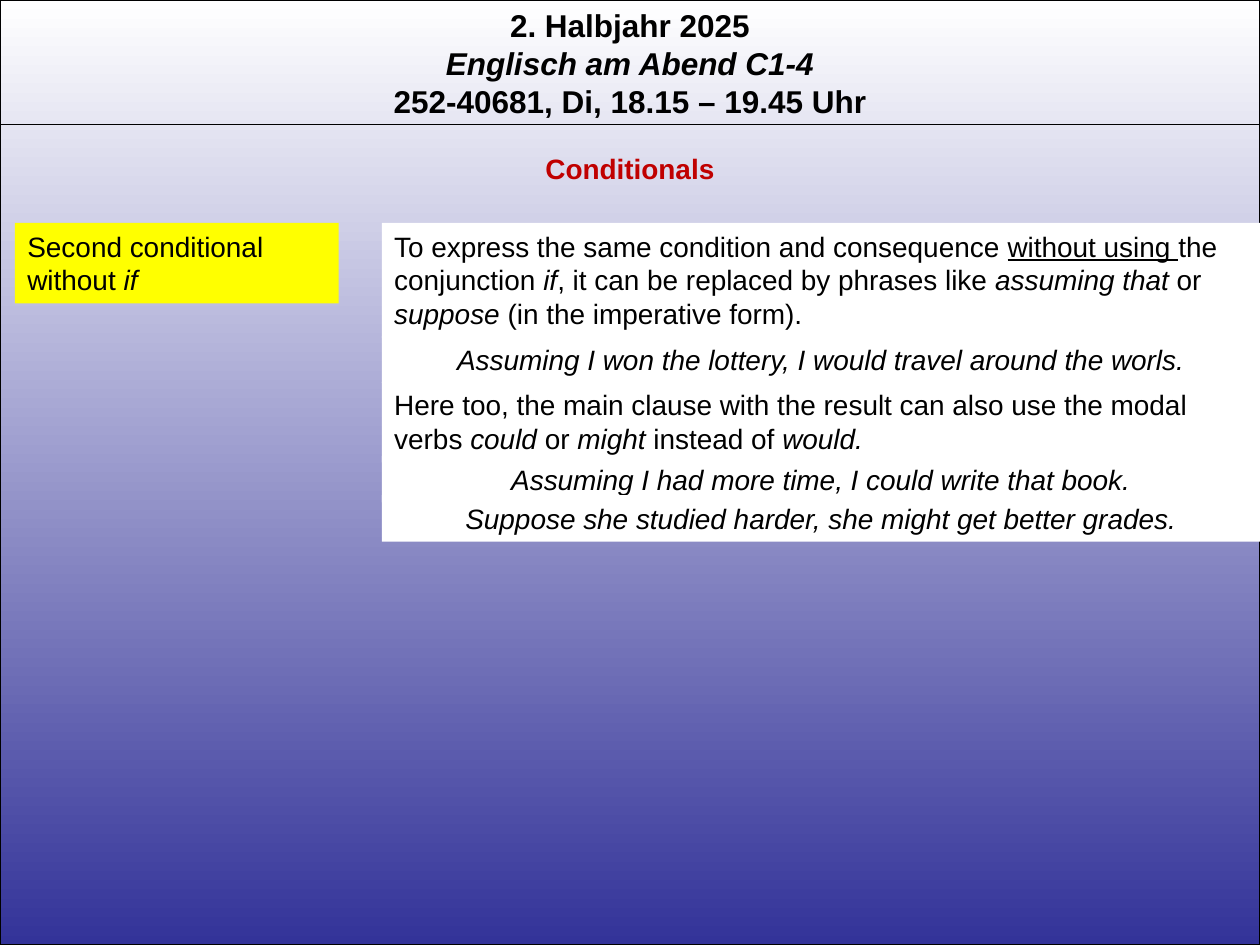
from pptx import Presentation
from pptx.dml.color import RGBColor
from pptx.enum.shapes import MSO_CONNECTOR, MSO_SHAPE
from pptx.enum.text import MSO_ANCHOR, MSO_AUTO_SIZE, PP_ALIGN
from pptx.oxml.ns import qn
from pptx.util import Pt
from lxml import etree

LEFT, CENTER = PP_ALIGN.LEFT, PP_ALIGN.CENTER
RECTANGLE, STRAIGHT = MSO_SHAPE.RECTANGLE, MSO_CONNECTOR.STRAIGHT
TOP, NO_RESIZE = MSO_ANCHOR.TOP, MSO_AUTO_SIZE.NONE

THEME = {
    "font": "Arial", "header_size": 18, "body_size": 16, "line": 0.75,
    "black": "000000", "white": "FFFFFF", "blue": "333399",
    "yellow": "FFFF00", "red": "C00000",
}
WIDTH, HEIGHT = 720, 540
HEADER_RULE = 71.3
TITLE_BOX = (0, 82.8, WIDTH, 26.6)
TOPIC_BOX = (8.6, 127.4, 185, 46.1)
PANEL_LEFT = 218.2

HEADER = [
    [("2. Halbjahr 2025", "b")],
    [("Englisch am Abend C1-4", "bi")],
    [("252-40681, Di, 18.15 – 19.45 Uhr", "b")],
]
TITLE = [[("Conditionals", "b")]]
TOPIC = [[("Second conditional", "")], [("without ", ""), ("if", "i")]]
PANELS = [
    (127.4, 65.5, LEFT, [
        ("To express the same condition and consequence ", ""),
        ("without using ", "u"), ("the conjunction ", ""), ("if", "i"),
        (", it can be replaced by phrases like ", ""),
        ("assuming that", "i"), (" or ", ""), ("suppose ", "i"),
        ("(in the imperative form).", "")]),
    (192.2, 26.6, CENTER, [
        ("Assuming I won the lottery, I would travel around the worls.", "i")]),
    (260.6, 26.6, CENTER, [
        ("Assuming I had more time, I could write that book.", "i")]),
    (218.2, 46.1, LEFT, [
        ("Here too, the main clause with the result can also use the modal verbs ", ""),
        ("could", "i"), (" or ", ""), ("might", "i"),
        (" instead of ", ""), ("would.", "i")]),
    (283, 26.6, CENTER, [
        ("Suppose she studied harder, she might get better grades.", "i")]),
]


def color(name):
    return RGBColor.from_string(THEME[name])


def write(shape, paragraphs, alignment=LEFT, size="body_size", ink="black"):
    frame = shape.text_frame
    frame.word_wrap = True
    frame.auto_size = NO_RESIZE
    frame.vertical_anchor = TOP
    for index, runs in enumerate(paragraphs):
        paragraph = frame.add_paragraph() if index else frame.paragraphs[0]
        paragraph.alignment = alignment
        paragraph.line_spacing = 1.0
        paragraph.space_before = Pt(0)
        for text, style in runs:
            run = paragraph.add_run()
            run.text = text
            font = run.font
            font.name = THEME["font"]
            font.size = Pt(THEME[size])
            font.color.rgb = color(ink)
            font.bold = "b" in style
            font.italic = "i" in style
            font.underline = "u" in style


def add_box(slide, box, fill):
    shape = slide.shapes.add_shape(RECTANGLE, *map(Pt, box))
    shape.shadow.inherit = False
    shape.fill.solid()
    shape.fill.fore_color.rgb = color(fill)
    shape.line.fill.background()
    return shape


def add_backdrop(slide):
    backdrop = add_box(slide, (0, 0, WIDTH, HEIGHT), "white")
    backdrop.fill.gradient()
    backdrop.fill.gradient_angle = 270
    for stop, position, name in zip(backdrop.fill.gradient_stops, (0, 1), ("white", "blue")):
        stop.position = position
        stop.color.rgb = color(name)
    backdrop.line.color.rgb = color("black")
    backdrop.line.width = Pt(THEME["line"])


def add_header(slide):
    header = slide.shapes.add_textbox(0, 0, Pt(WIDTH), Pt(72.7))
    write(header, HEADER, CENTER, "header_size")
    rule = slide.shapes.add_connector(STRAIGHT, 0, Pt(HEADER_RULE), Pt(WIDTH), Pt(HEADER_RULE))
    rule.line.color.rgb = color("black")
    rule.line.width = Pt(THEME["line"])
    etree.SubElement(rule._element.spPr, qn("a:effectLst"))


def place_title(slide):
    title = slide.shapes.title
    title.left, title.top, title.width, title.height = map(Pt, TITLE_BOX)
    write(title, TITLE, CENTER, ink="red")
    slide.shapes.element.append(title.element)


def main():
    presentation = Presentation()
    presentation.slide_width, presentation.slide_height = Pt(WIDTH), Pt(HEIGHT)
    slide = presentation.slides.add_slide(presentation.slide_layouts[5])
    add_backdrop(slide)
    add_header(slide)
    write(add_box(slide, TOPIC_BOX, "yellow"), TOPIC)
    for top, height, alignment, runs in PANELS:
        panel = add_box(slide, (PANEL_LEFT, top, WIDTH - PANEL_LEFT, height), "white")
        write(panel, [runs], alignment)
    place_title(slide)
    presentation.save("out.pptx")


if __name__ == "__main__":
    main()
